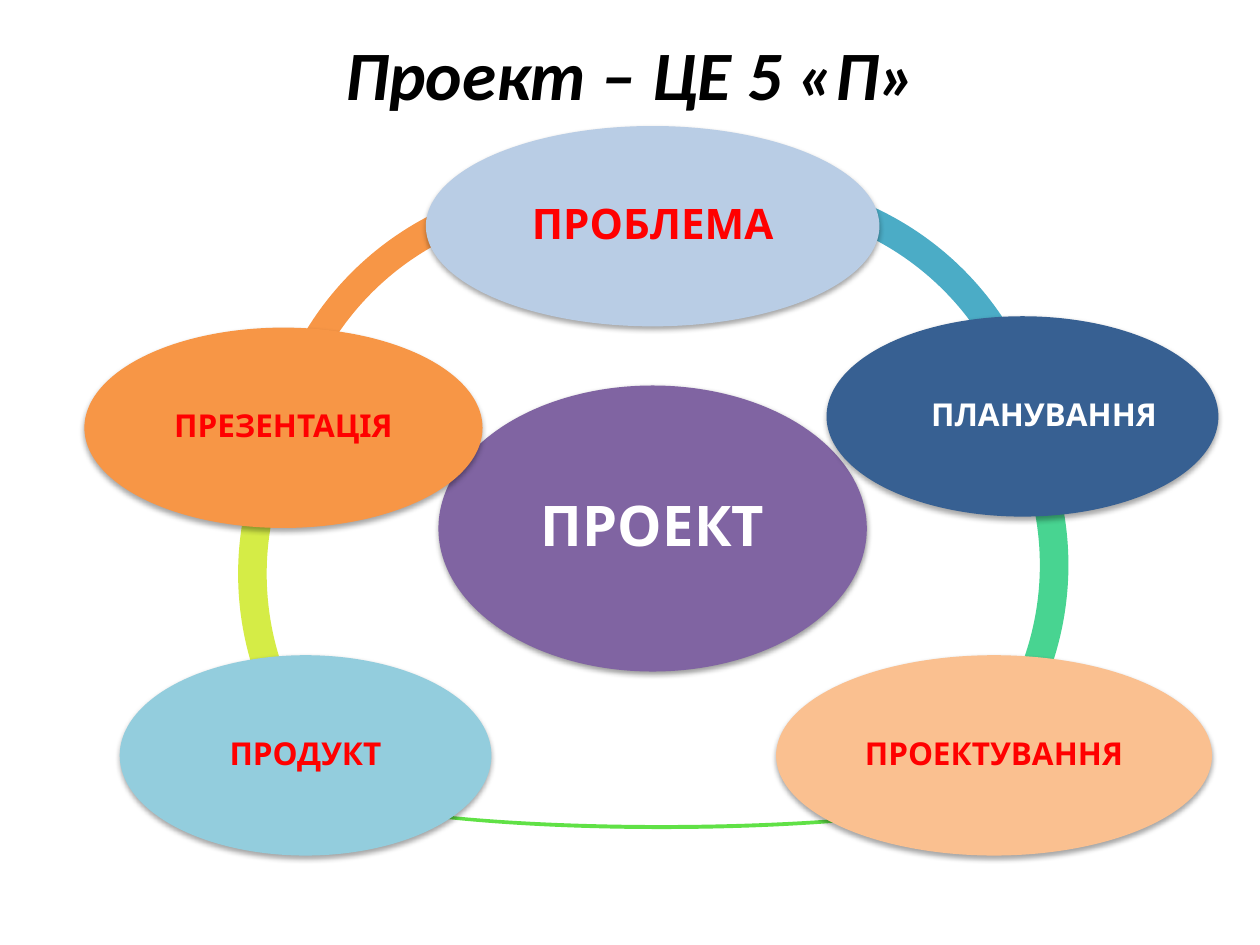
from lxml import etree
from pptx import Presentation
from pptx.dml.color import RGBColor
from pptx.enum.shapes import MSO_SHAPE
from pptx.enum.text import MSO_ANCHOR, MSO_AUTO_SIZE, PP_ALIGN
from pptx.oxml.ns import qn
from pptx.util import Inches, Pt

ELLIPSE, ARC = MSO_SHAPE.OVAL, MSO_SHAPE.BLOCK_ARC
MIDDLE, NO_FIT = MSO_ANCHOR.MIDDLE, MSO_AUTO_SIZE.NONE
CENTER, RIGHT = PP_ALIGN.CENTER, PP_ALIGN.RIGHT
TITLE_ONLY = 5
COLUMNS, ROWS = 100, 75
STAGE_HEIGHT, RING = 15.9, 49.3
ADJUSTMENT_PER_DEGREE = 0.6

COLORS = {
    "black": "000000", "white": "FFFFFF", "red": "FF0000",
    "purple": "8064A2", "pale blue": "B9CDE5", "navy": "376092",
    "peach": "FAC090", "sky": "93CDDD", "orange": "F79646",
    "lime": "D5EC46", "green": "60E146", "mint": "48D491", "teal": "4BACC6",
}


class CycleSlide:
    title_font, label_font = "Calibri", "Comic Neue"

    def __init__(self, deck):
        self.column = deck.slide_width / COLUMNS
        self.row = deck.slide_height / ROWS
        self.slide = deck.slides.add_slide(deck.slide_layouts[TITLE_ONLY])

    def box(self, left, top, width, height):
        return (round(left * self.column), round(top * self.row),
                round(width * self.column), round(height * self.row))

    def color(self, name):
        return RGBColor.from_string(COLORS[name])

    def add_words(self, paragraph, text, font, size, color, italic=None):
        run = paragraph.add_run()
        run.text = text
        run.font.name, run.font.size = font, Pt(size)
        run.font.bold, run.font.italic = True, italic
        run.font.color.rgb = self.color(color)

    def title(self, text, box, size):
        heading = self.slide.shapes.title
        heading.left, heading.top, heading.width, heading.height = self.box(*box)
        frame = heading.text_frame
        frame.auto_size, frame.vertical_anchor = NO_FIT, MIDDLE
        paragraph = frame.paragraphs[0]
        paragraph.alignment = CENTER
        self.add_words(paragraph, text, self.title_font, size, "black", italic=True)
        paragraph.add_line_break()
        etree.SubElement(paragraph._p[-1], qn("a:rPr"), sz=str(round(size * 100)))

    def shape(self, kind, box, fill):
        figure = self.slide.shapes.add_shape(kind, *self.box(*box))
        figure.shadow.inherit = False
        figure.fill.solid()
        figure.fill.fore_color.rgb = self.color(fill)
        figure.line.fill.background()
        return figure

    def arc(self, box, start, end, thickness, fill):
        band = self.shape(ARC, box, fill)
        band.adjustments[0] = start * ADJUSTMENT_PER_DEGREE
        band.adjustments[1] = end * ADJUSTMENT_PER_DEGREE
        band.adjustments[2] = thickness

    def drop_shadow(self, figure, opacity, distance):
        effects = figure._element.spPr.find(qn("a:effectLst"))
        shadow = etree.SubElement(
            effects, qn("a:outerShdw"), blurRad=str(Pt(3.1)),
            dist=str(Pt(distance)), dir="5400000", rotWithShape="0")
        tint = etree.SubElement(shadow, qn("a:srgbClr"), val=COLORS["black"])
        etree.SubElement(tint, qn("a:alpha"), val=str(opacity * 1000))

    def ellipse(self, text, box, fill, size, color, align=CENTER,
                inset=0.03, opacity=35, distance=1.8):
        bubble = self.shape(ELLIPSE, box, fill)
        self.drop_shadow(bubble, opacity, distance)
        frame = bubble.text_frame
        frame.word_wrap, frame.vertical_anchor = True, MIDDLE
        frame.margin_left = frame.margin_right = Inches(inset)
        frame.margin_top = frame.margin_bottom = Inches(inset)
        paragraph = frame.paragraphs[0]
        paragraph.alignment, paragraph.line_spacing = align, 0.9
        self.add_words(paragraph, text, self.label_font, size, color)


def main():
    deck = Presentation()
    deck.slide_width, deck.slide_height = Inches(10), Inches(7.5)
    cycle = CycleSlide(deck)
    cycle.title("Проект – ЦЕ 5 «П»", (5.1, 5.2, 90, 7.7), 39.6)

    links = [
        ((20.7, 14.4, RING, RING), 197.42, 285.37, 0.046, "orange"),
        ((18.9, 20.9, RING, RING), 143.19, 208.91, 0.046, "lime"),
        ((24.6, 58.1, 55.8, 7.7), 0, 180, 0.041, "green"),
        ((35.5, 20.2, RING, RING), 330.7, 38.92, 0.046, "mint"),
        ((34.4, 14.2, RING, RING), 253.99, 340.65, 0.046, "teal"),
    ]
    for link in links:
        cycle.arc(*link)

    cycle.ellipse("ПРОЕКТ", (34.8, 30.6, 34, 22.7), "purple", 32, "white",
                  inset=0.04, opacity=38, distance=1.6)

    stages = [
        ("ПРОБЛЕМА", 33.8, 10, 36, "pale blue", 24, "red", CENTER),
        ("ПЛАНУВАННЯ", 65.6, 25.1, 31.1, "navy", 18, "white", RIGHT),
        ("ПРОЕКТУВАННЯ", 61.6, 52, 34.6, "peach", 18, "red", CENTER),
        ("ПРОДУКТ", 9.5, 52, 29.5, "sky", 18, "red", CENTER),
        ("ПРЕЗЕНТАЦІЯ", 6.7, 26, 31.6, "orange", 18, "red", CENTER),
    ]
    for text, left, top, width, fill, size, color, align in stages:
        cycle.ellipse(text, (left, top, width, STAGE_HEIGHT), fill, size, color, align)

    deck.save("out.pptx")


if __name__ == "__main__":
    main()
